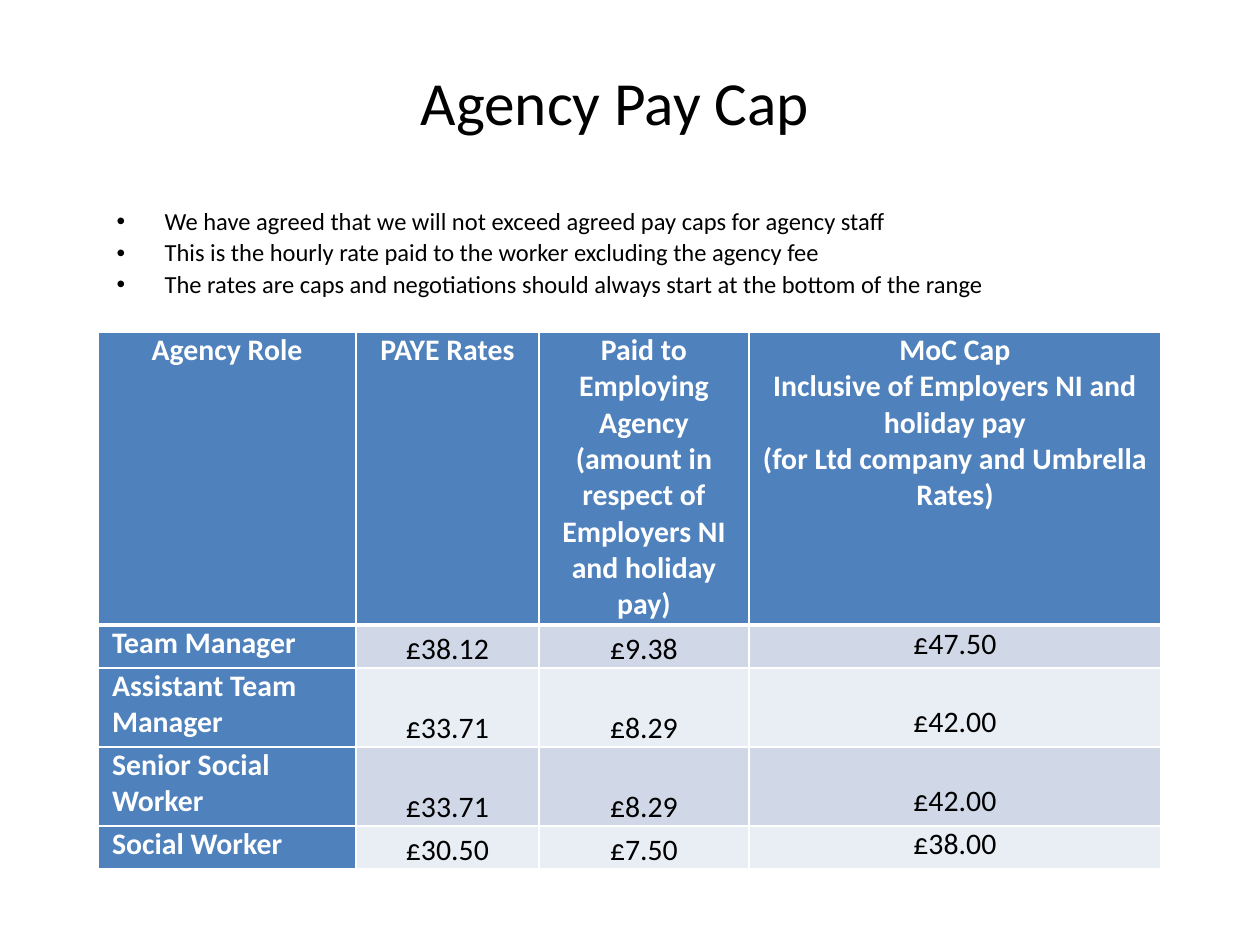
from lxml import etree
from pptx import Presentation
from pptx.dml.color import RGBColor
from pptx.enum.text import MSO_ANCHOR, MSO_AUTO_SIZE, PP_ALIGN
from pptx.oxml.ns import qn
from pptx.util import Pt

TOP, MIDDLE, BOTTOM = MSO_ANCHOR.TOP, MSO_ANCHOR.MIDDLE, MSO_ANCHOR.BOTTOM
LEFT, CENTER = PP_ALIGN.LEFT, PP_ALIGN.CENTER
FIXED = MSO_AUTO_SIZE.NONE
SCALE = 914400 / 126
FONT = "Calibri"
COLORS = {"ink": "000000", "white": "FFFFFF", "head": "4F81BD",
          "dark": "D0D8E8", "light": "E9EDF4"}
POINTS = [
    "We have agreed that we will not exceed agreed pay caps for agency staff",
    "This is the hourly rate paid to the worker excluding the agency fee",
    "The rates are caps and negotiations should always start at the bottom of the range",
]
ROWS = [
    ["Agency Role", "PAYE Rates",
     "Paid to Employing Agency (amount in respect of Employers NI and holiday pay)",
     "MoC Cap\nInclusive of Employers NI and holiday pay\n"
     "(for Ltd company and Umbrella Rates)"],
    ["Team Manager", "£38.12", "£9.38", "£47.50"],
    ["Assistant Team Manager", "£33.71", "£8.29", "£42.00"],
    ["Senior Social Worker", "£33.71", "£8.29", "£42.00"],
    ["Social Worker", "£30.50", "£7.50", "£38.00"],
]
WIDTHS = [258, 183, 210, 412]
HEIGHTS = [293, 43, 79, 79, 43]


def px(size):
    """Turn px into EMU."""
    return round(size * SCALE)


def place(shape, box):
    """Move a shape to a box in px."""
    shape.left, shape.top, shape.width, shape.height = map(px, box)


def write(para, text, size, color="ink", bold=False):
    """Add one styled run to a paragraph."""
    run = para.add_run()
    run.text = text
    font = run.font
    font.name, font.size, font.bold = FONT, Pt(size), bold
    font.color.rgb = RGBColor.from_string(COLORS[color])


def lines(frame, texts):
    """Yield a paragraph of the frame for each text."""
    for i, text in enumerate(texts):
        yield (frame.add_paragraph() if i else frame.paragraphs[0]), text


def add_title(shape, box):
    """Fill the title, set a little left of centre."""
    place(shape, box)
    frame = shape.text_frame
    frame.auto_size, frame.vertical_anchor = FIXED, MIDDLE
    frame.margin_left, frame.margin_right = px(13), px(43)
    para = frame.paragraphs[0]
    para.alignment = CENTER
    write(para, "Agency Pay Cap", 35)


def add_list(shape, box):
    """Fill the body with the bullet points."""
    place(shape, box)
    frame = shape.text_frame
    frame.auto_size, frame.vertical_anchor = FIXED, MIDDLE
    for para, text in lines(frame, POINTS):
        para.line_spacing, para.space_before = 0.9, Pt(2.8)
        props = para._p.get_or_add_pPr()
        props.set("marL", str(px(48)))
        props.set("indent", str(-px(48)))
        etree.SubElement(props, qn("a:buChar")).set("char", "•")
        write(para, text, 14)


def set_edges(cell, row):
    """Draw white borders, thick below the header row."""
    props = cell._tc.get_or_add_tcPr()
    thick = {0: "lnB", 1: "lnT"}.get(row)
    for i, side in enumerate(["lnL", "lnR", "lnT", "lnB"]):
        line = etree.Element(qn("a:" + side))
        line.set("w", str(Pt(3 if side == thick else 1)))
        fill = etree.SubElement(line, qn("a:solidFill"))
        etree.SubElement(fill, qn("a:srgbClr")).set("val", COLORS["white"])
        props.insert(i, line)


def fill_cell(cell, text, row, col):
    """Write and style one cell by its row and column."""
    head = row == 0 or col == 0
    tone = "head" if head else "dark" if row % 2 else "light"
    cell.fill.solid()
    cell.fill.fore_color.rgb = RGBColor.from_string(COLORS[tone])
    cell.margin_left = cell.margin_right = px(14)
    cell.margin_top = 0
    cell.margin_bottom = px(6) if row and col == 3 else 0
    cell.vertical_anchor = TOP if head else BOTTOM
    for para, part in lines(cell.text_frame, text.split("\n")):
        para.alignment = LEFT if row and col == 0 else CENTER
        write(para, part, 17, "white" if head else "ink", head)
    set_edges(cell, row)


def add_rates(slide, box):
    """Add the table of pay caps."""
    table = slide.shapes.add_table(len(ROWS), len(WIDTHS), *map(px, box)).table
    for col, width in zip(table.columns, WIDTHS):
        col.width = px(width)
    for row, height in zip(table.rows, HEIGHTS):
        row.height = px(height)
    for r, row in enumerate(ROWS):
        for c, text in enumerate(row):
            fill_cell(table.cell(r, c), text, r, c)


def main():
    """Build the slide and save it."""
    deck = Presentation()
    deck.slide_width, deck.slide_height = px(1260), px(945)
    slide = deck.slides.add_slide(deck.slide_layouts[1])
    add_title(slide.shapes.title, (104, 24, 1052, 154))
    add_list(slide.placeholders[1], (104, 201, 1052, 106))
    add_rates(slide, (98, 332, sum(WIDTHS), sum(HEIGHTS)))
    deck.save("out.pptx")


if __name__ == "__main__":
    main()
